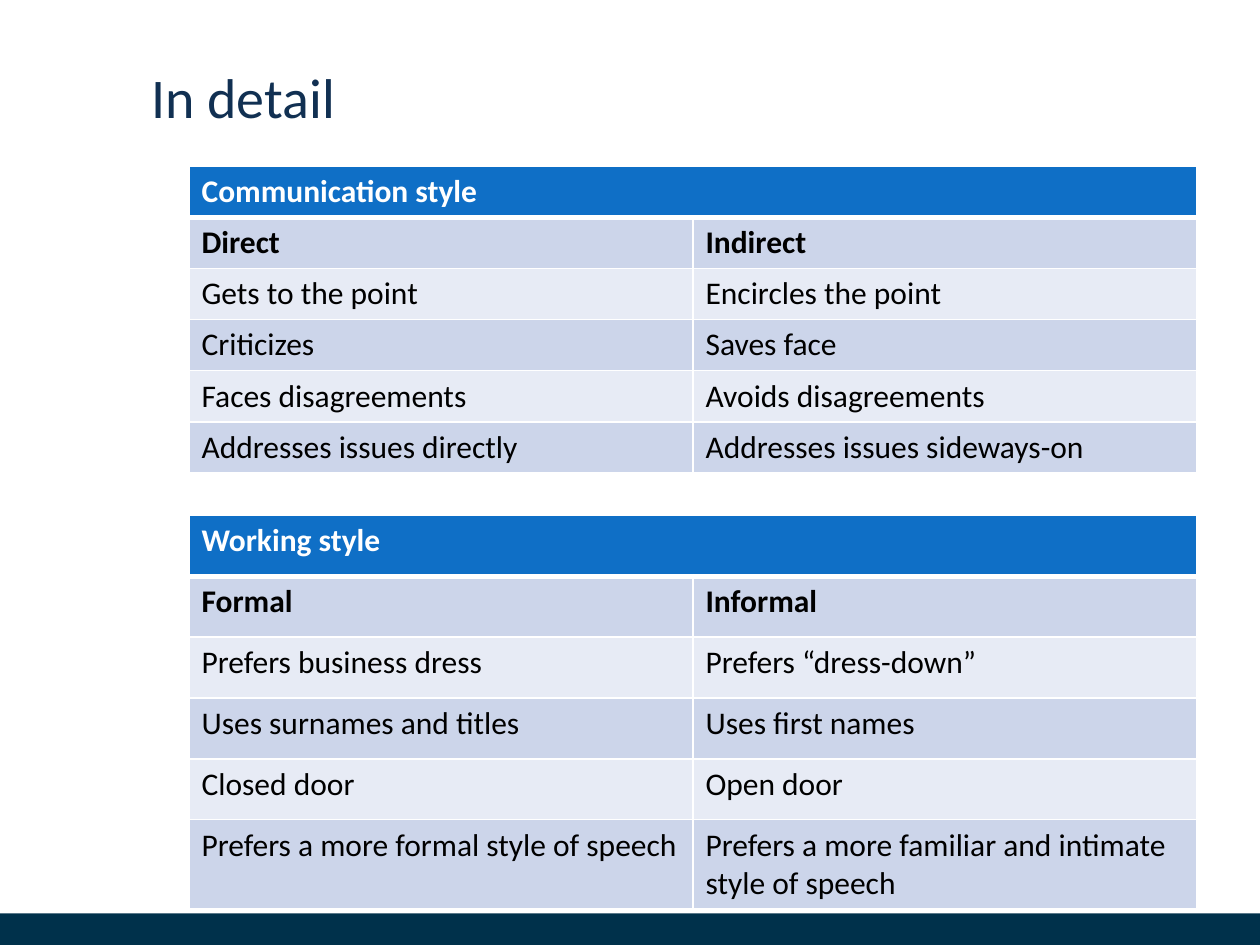
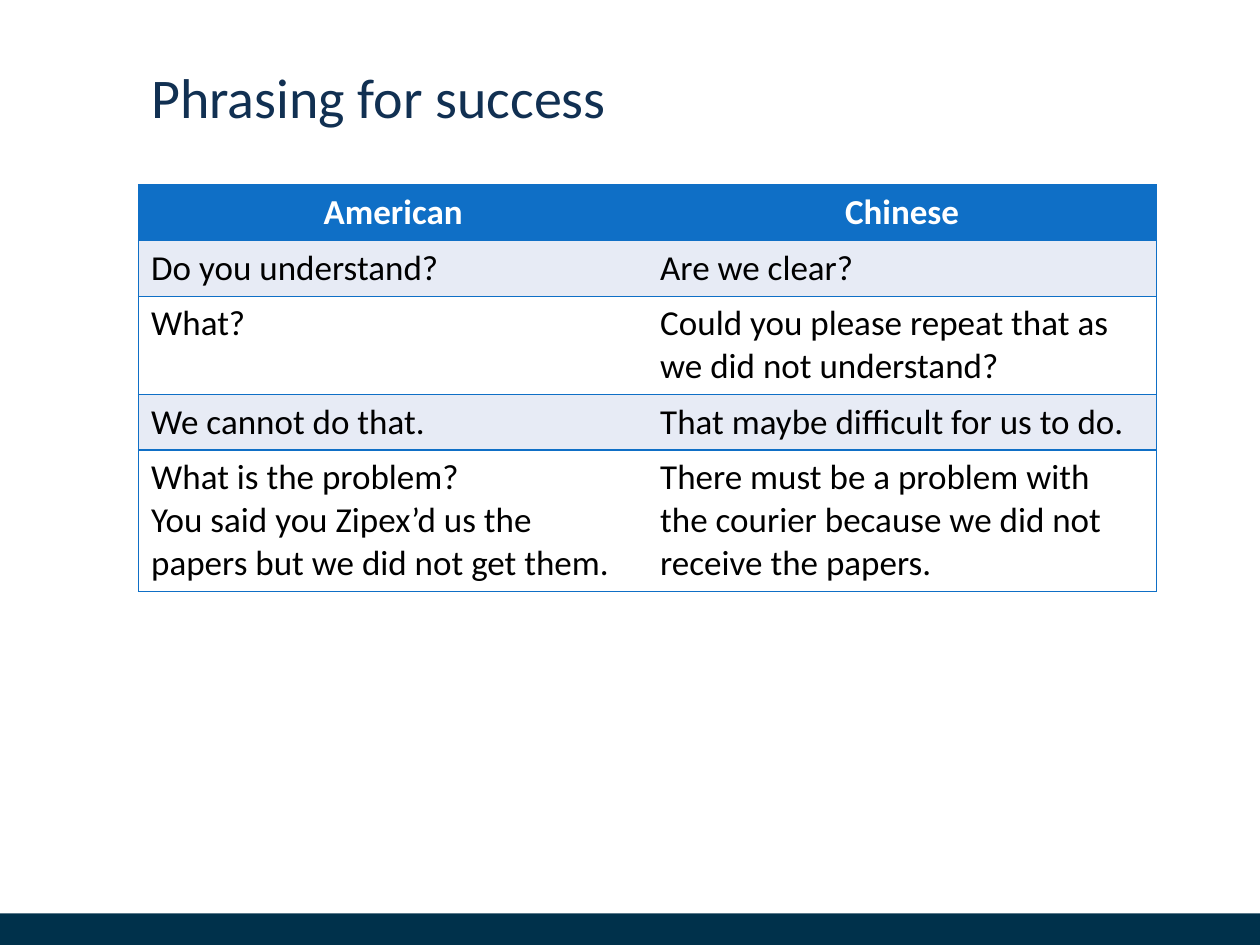
from pptx import Presentation
from pptx.dml.color import RGBColor
from pptx.enum.shapes import MSO_SHAPE
from pptx.enum.text import MSO_ANCHOR, PP_ALIGN
from pptx.oxml.ns import qn
from pptx.util import Inches, Pt
from lxml import etree

RECT = MSO_SHAPE.RECTANGLE
TOP = MSO_ANCHOR.TOP
LEFT, CENTER = PP_ALIGN.LEFT, PP_ALIGN.CENTER

WHITE = RGBColor(0xFF, 0xFF, 0xFF)
BLACK = RGBColor(0x00, 0x00, 0x00)
NAVY = RGBColor(0x11, 0x30, 0x52)
FOOTER = RGBColor(0x00, 0x31, 0x4B)
BLUE = RGBColor(0x0F, 0x6F, 0xC6)
BAND_DARK = RGBColor(0xCC, 0xD5, 0xEA)
BAND_LIGHT = RGBColor(0xE7, 0xEB, 0xF5)
FONT = "Calibri"
TITLE_ONLY = 5

COMMUNICATION = [
    ("Communication style", ""),
    ("Direct", "Indirect"),
    ("Gets to the point", "Encircles the point"),
    ("Criticizes", "Saves face"),
    ("Faces disagreements", "Avoids disagreements"),
    ("Addresses issues directly", "Addresses issues sideways-on"),
]
WORKING = [
    ("Working style", ""),
    ("Formal", "Informal"),
    ("Prefers business dress", "Prefers “dress-down”"),
    ("Uses surnames and titles", "Uses first names"),
    ("Closed door", "Open door"),
    ("Prefers a more formal style of speech",
     "Prefers a more familiar and intimate style of speech"),
]
PHRASES = [
    ("American", "Chinese"),
    ("Do you understand?", "Are we clear?"),
    ("What?", "Could you please repeat that as we did not understand?"),
    ("We cannot do that.", "That maybe difficult for us to do."),
    ("What is the problem?\nYou said you Zipex’d us the papers but we did not get them.",
     "There must be a problem with the courier because we did not receive the papers."),
]


def add_run(p, text, size, color, bold=False):
    r = p.add_run()
    r.text = text
    r.font.name = FONT
    r.font.size = Pt(size)
    r.font.color.rgb = color
    r.font.bold = bold


def add_band(slide, top, height, color):
    sp = slide.shapes.add_shape(RECT, 0, Inches(top), Inches(10), Inches(height))
    sp.shadow.inherit = False
    sp.fill.solid()
    sp.fill.fore_color.rgb = color
    sp.line.fill.background()


def add_slide(prs, title):
    slide = prs.slides.add_slide(prs.slide_layouts[TITLE_ONLY])
    ph = slide.shapes.title
    ph.left, ph.top, ph.width, ph.height = map(Inches, (1.1, 0.51, 7.8, 0.82))
    tf = ph.text_frame
    tf.vertical_anchor = TOP
    p = tf.paragraphs[0]
    p.alignment = LEFT
    p.line_spacing = 0.9
    add_run(p, title, 32, NAVY)
    add_band(slide, 7.2, 0.3, FOOTER)
    add_band(slide, 7.2, 0.05, WHITE)
    return slide


def set_border(cell, side, color, width=1):
    ln = etree.SubElement(cell._tc.get_or_add_tcPr(), qn(f"a:ln{side}"), w=str(Pt(width)))
    if color is None:
        etree.SubElement(ln, qn("a:noFill"))
    else:
        fill = etree.SubElement(ln, qn("a:solidFill"))
        etree.SubElement(fill, qn("a:srgbClr"), val=str(color))


def fill_cell(cell, text, size, fill, color, bold, align):
    cell.fill.solid()
    cell.fill.fore_color.rgb = fill
    tf = cell.text_frame
    for i, line in enumerate(text.split("\n")):
        p = tf.add_paragraph() if i else tf.paragraphs[0]
        p.alignment = align
        if line:
            add_run(p, line, size, color, bold)


def add_grid(slide, rows, left, top, width, heights):
    frame = slide.shapes.add_table(len(rows), 2, Inches(left), Inches(top),
                                   Inches(width), Inches(sum(heights)))
    table = frame.table
    for col in table.columns:
        col.width = Inches(width / 2)
    for row, height in zip(table.rows, heights):
        row.height = Inches(height)
    return table


def add_style_table(slide, rows, top, height):
    table = add_grid(slide, rows, 1.5, top, 8, [height / len(rows)] * len(rows))
    table.cell(0, 0).merge(table.cell(0, 1))
    for i, row in enumerate(rows):
        fill = BLUE if i == 0 else BAND_DARK if i % 2 else BAND_LIGHT
        for j, text in enumerate(row):
            cell = table.cell(i, j)
            for side in "LRTB":
                heavy = (i, side) in ((0, "B"), (1, "T"))
                set_border(cell, side, WHITE, 3 if heavy else 1)
            fill_cell(cell, text, 18, fill, BLACK if i else WHITE, i < 2, LEFT)


def add_phrase_table(slide, rows):
    table = add_grid(slide, rows, 1.1, 1.47, 8.08, [0.44, 0.44, 0.78, 0.44, 1.12])
    for i, row in enumerate(rows):
        fill = BLUE if i == 0 else BAND_LIGHT if i % 2 else WHITE
        for j, text in enumerate(row):
            cell = table.cell(i, j)
            set_border(cell, "L", None if j else BLUE)
            set_border(cell, "R", BLUE if j else None)
            set_border(cell, "T", BLUE)
            set_border(cell, "B", BLUE)
            fill_cell(cell, text, 20, fill, BLACK if i else WHITE, i == 0,
                      LEFT if i else CENTER)


def main():
    prs = Presentation()
    prs.slide_width, prs.slide_height = Inches(10), Inches(7.5)

    detail = add_slide(prs, "In detail")
    add_style_table(detail, COMMUNICATION, 1.32, 2.43)
    add_style_table(detail, WORKING, 4.09, 2.9)

    phrasing = add_slide(prs, "Phrasing for success")
    add_phrase_table(phrasing, PHRASES)

    prs.save("out.pptx")


if __name__ == "__main__":
    main()
